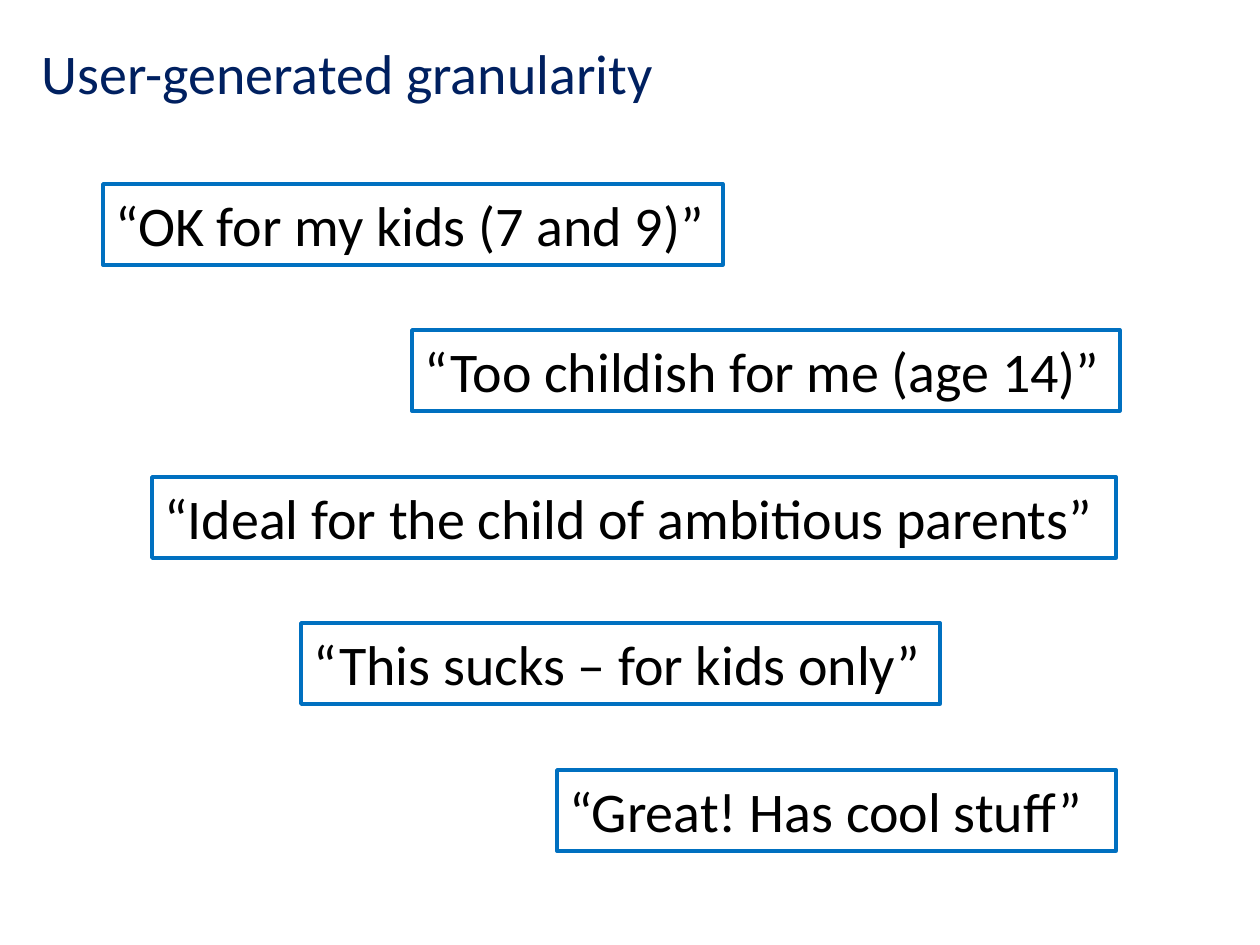
from dataclasses import dataclass

from pptx import Presentation
from pptx.dml.color import RGBColor
from pptx.enum.shapes import MSO_SHAPE as Shape
from pptx.enum.text import MSO_ANCHOR as Anchor, PP_ALIGN as Align
from pptx.util import Emu, Pt

PX = 914400 / 126


@dataclass(frozen=True)
class Theme:
    """Colours and type sizes of the slide."""
    heading: RGBColor = RGBColor.from_string("002060")
    ink: RGBColor = RGBColor.from_string("000000")
    frame: RGBColor = RGBColor.from_string("0070C0")
    font: str = "Calibri"
    size: int = 32
    border: int = 2


class Board:
    def __init__(self, slide, theme):
        self.slide = slide
        self.theme = theme

    def lengths(self, *pixels):
        return [Emu(round(value * PX)) for value in pixels]

    def set_words(self, shape, words, color):
        frame = shape.text_frame
        frame.text = words
        frame.word_wrap = True
        frame.vertical_anchor = Anchor.TOP
        paragraph = frame.paragraphs[0]
        paragraph.alignment = Align.LEFT
        font = paragraph.runs[0].font
        font.name = self.theme.font
        font.size = Pt(self.theme.size)
        font.color.rgb = color

    def title(self, words, *box):
        heading = self.slide.shapes.title
        heading.left, heading.top, heading.width, heading.height = self.lengths(*box)
        self.set_words(heading, words, self.theme.heading)

    def quote(self, words, *box):
        review = self.slide.shapes.add_shape(Shape.RECTANGLE, *self.lengths(*box))
        review.shadow.inherit = False
        review.fill.background()
        review.line.color.rgb = self.theme.frame
        review.line.width = Pt(self.theme.border)
        self.set_words(review, words, self.theme.ink)


def main():
    deck = Presentation()
    deck.slide_width, deck.slide_height = Emu(round(1260 * PX)), Emu(round(945 * PX))
    board = Board(deck.slides.add_slide(deck.slide_layouts[5]), Theme())
    row_height = 81
    board.title("User-generated granularity", 29, 32, 645, row_height)
    reviews = [
        ("“OK for my kids (7 and 9)”", 103, 620),
        ("“Too childish for me (age 14)”", 412, 708),
        ("“Ideal for the child of ambitious parents”", 152, 964),
        ("“This sucks – for kids only”", 301, 639),
        ("“Great! Has cool stuff”", 557, 559),
    ]
    first_top, last_top = 184, 770
    for row, (words, left, width) in enumerate(reviews):
        top = first_top + row * (last_top - first_top) // (len(reviews) - 1)
        board.quote(words, left, top, width, row_height)
    deck.save("out.pptx")


if __name__ == "__main__":
    main()
